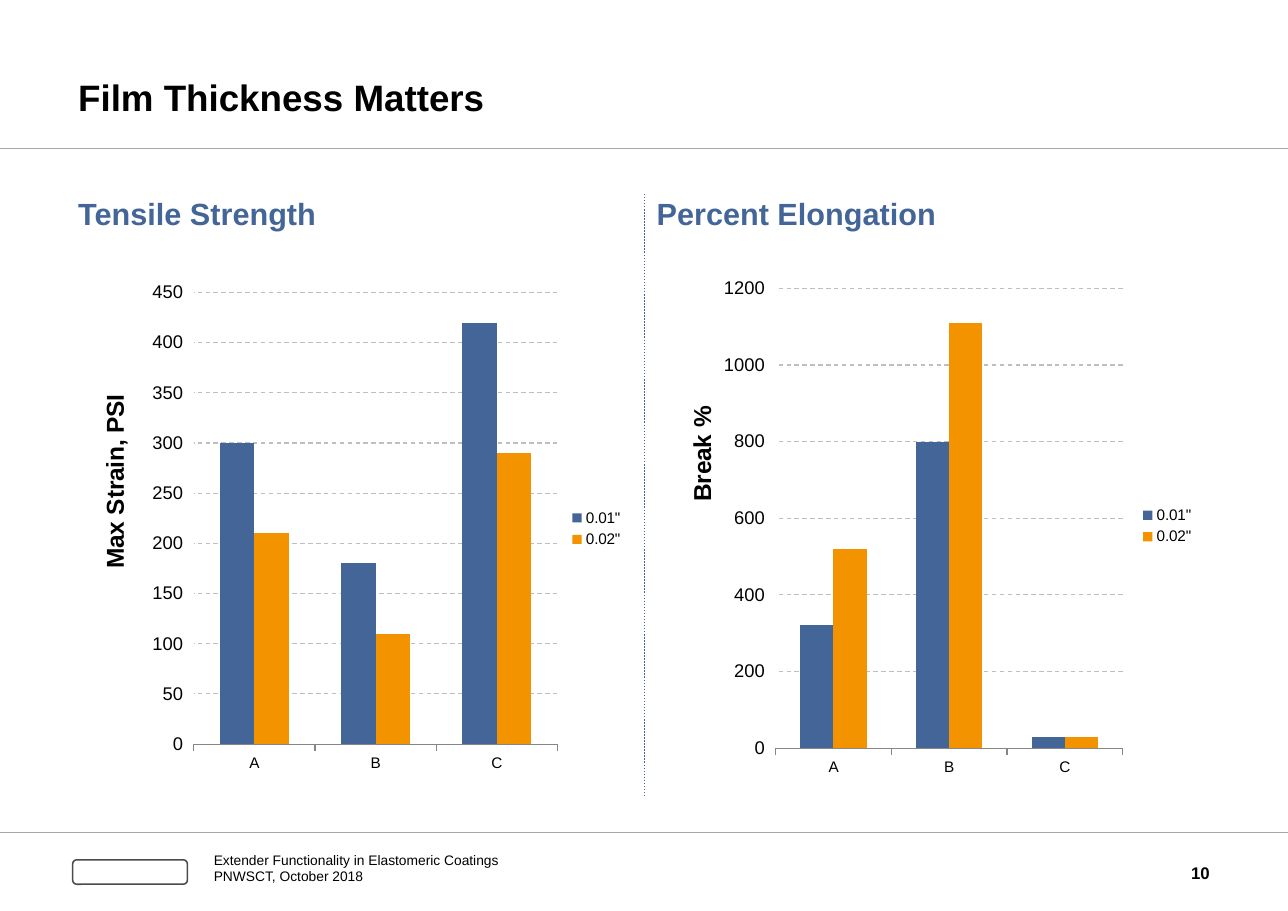
from dataclasses import dataclass
from typing import Optional

from lxml.etree import SubElement
from pptx import Presentation
from pptx.chart.data import CategoryChartData
from pptx.dml.color import RGBColor
from pptx.enum.chart import XL_CHART_TYPE, XL_LEGEND_POSITION, XL_TICK_MARK
from pptx.enum.dml import MSO_LINE
from pptx.enum.shapes import MSO_CONNECTOR, MSO_SHAPE
from pptx.enum.text import MSO_ANCHOR, PP_ALIGN
from pptx.oxml import parse_xml
from pptx.oxml.ns import nsdecls, qn
from pptx.util import Pt

FONT = "Arial"
BLACK, BLUE, ORANGE, GREY = "000000", "436597", "F49300", "A6A6A6"
WIDTH, HEIGHT = 841.68, 595.44
CATEGORIES = ("A", "B", "C")


@dataclass
class Rule:
    x1: float
    y1: float
    x2: float
    y2: float
    color: str
    weight: float
    dash: Optional[MSO_LINE] = None


@dataclass
class Label:
    x: float
    y: float
    w: float
    h: float
    lines: tuple[str, ...]
    size: float
    color: str = BLACK
    bold: bool = True
    anchor: MSO_ANCHOR = MSO_ANCHOR.TOP
    align: PP_ALIGN = PP_ALIGN.LEFT
    leading: Optional[float] = None


@dataclass
class BarChart:
    x: float
    y: float
    w: float
    h: float
    axis_title: str
    top: int
    step: int
    thin: tuple[int, ...]
    thick: tuple[int, ...]
    plot_at: dict[str, float]
    title_at: dict[str, float]


RULES = [
    Rule(0, 97.2, WIDTH, 97.2, GREY, 0.75),
    Rule(0, 544.3, WIDTH, 544.3, GREY, 0.5),
    Rule(421.2, 126.7, 421.2, 521.3, BLUE, 1, MSO_LINE.ROUND_DOT),
]
LABELS = [
    Label(51.1, 15.1, 739.4, 62.6, ("Film Thickness Matters",), 24,
          anchor=MSO_ANCHOR.BOTTOM),
    Label(51.1, 127.4, 365.8, 38.9, ("Tensile Strength",), 20, BLUE),
    Label(429.1, 127.4, 365.8, 38.9, ("Percent Elongation",), 20, BLUE),
    Label(139.7, 556.6, 353.5, 22.3,
          ("Extender Functionality in Elastomeric Coatings", "PNWSCT, October 2018"),
          9, bold=False, anchor=MSO_ANCHOR.MIDDLE, leading=10.4),
    Label(726.5, 553.7, 64.1, 33.8, ("10",), 11,
          anchor=MSO_ANCHOR.MIDDLE, align=PP_ALIGN.RIGHT),
]
CHARTS = [
    BarChart(54.7, 177.8, 360, 335.5, "Max Strain, PSI", 450, 50,
             (300, 180, 420), (210, 110, 290),
             {"x": 0.2, "y": 0.04, "w": 0.66, "h": 0.88}, {"x": 0.02, "y": 0.23}),
    BarChart(427.7, 175, 360, 337.7, "Break %", 1200, 200,
             (320, 800, 30), (520, 1110, 30),
             {"x": 0.22, "y": 0.04, "w": 0.63, "h": 0.89}, {"x": 0.05, "y": 0.26}),
]


def rgb(color: str) -> RGBColor:
    return RGBColor.from_string(color)


def style_font(font, size: float, color: str = BLACK, bold: bool = False) -> None:
    font.name = FONT
    font.size = Pt(size)
    font.bold = bold
    font.color.rgb = rgb(color)


def style_line(line, color: str, weight: float, dash: Optional[MSO_LINE] = None) -> None:
    line.color.rgb = rgb(color)
    line.width = Pt(weight)
    if dash is not None:
        line.dash_style = dash


def draw_rule(s, rule: Rule) -> None:
    cxn = s.shapes.add_connector(MSO_CONNECTOR.STRAIGHT, Pt(rule.x1), Pt(rule.y1),
                                 Pt(rule.x2), Pt(rule.y2))
    style_line(cxn.line, rule.color, rule.weight, rule.dash)
    SubElement(cxn._element.spPr, qn("a:effectLst"))


def draw_label(s, label: Label) -> None:
    sp = s.shapes.add_textbox(Pt(label.x), Pt(label.y), Pt(label.w), Pt(label.h))
    tf = sp.text_frame
    tf.word_wrap = True
    tf.vertical_anchor = label.anchor
    tf.margin_left = tf.margin_right = tf.margin_top = tf.margin_bottom = Pt(0)
    for i, line in enumerate(label.lines):
        p = tf.add_paragraph() if i else tf.paragraphs[0]
        p.alignment = label.align
        if label.leading:
            p.line_spacing = Pt(label.leading)
        r = p.add_run()
        r.text = line
        style_font(r.font, label.size, label.color, label.bold)


def draw_badge(s) -> None:
    sp = s.shapes.add_shape(MSO_SHAPE.ROUNDED_RECTANGLE, Pt(47.5), Pt(562), Pt(75), Pt(16))
    sp.shadow.inherit = False
    sp.fill.solid()
    sp.fill.fore_color.rgb = rgb("FFFFFF")
    style_line(sp.line, "4B4B4D", 1)


def set_layout(parent, index: int, place: dict[str, float]) -> None:
    for old in parent.findall(qn("c:layout")):
        parent.remove(old)
    layout = parse_xml(f"<c:layout {nsdecls('c')}/>")
    manual = SubElement(layout, qn("c:manualLayout"))
    settings = {"xMode": "edge", "yMode": "edge", **place}
    if "w" in place:
        settings = {"layoutTarget": "inner", **settings}
    for name, value in settings.items():
        SubElement(manual, qn(f"c:{name}")).set("val", str(value))
    parent.insert(index, layout)


def draw_chart(s, spec: BarChart) -> None:
    data = CategoryChartData()
    data.categories = CATEGORIES
    data.add_series('0.01"', spec.thin)
    data.add_series('0.02"', spec.thick)
    chart = s.shapes.add_chart(XL_CHART_TYPE.COLUMN_CLUSTERED, Pt(spec.x), Pt(spec.y),
                               Pt(spec.w), Pt(spec.h), data).chart
    style_font(chart.font, 10)
    chart.has_title = False
    chart.has_legend = True
    chart.legend.position = XL_LEGEND_POSITION.RIGHT
    chart.legend.include_in_layout = False

    plot = chart.plots[0]
    plot.vary_by_categories = False
    plot.gap_width = 150
    plot.overlap = 0
    for series, color in zip(plot.series, (BLUE, ORANGE)):
        series.format.fill.solid()
        series.format.fill.fore_color.rgb = rgb(color)

    cat = chart.category_axis
    cat.major_tick_mark = XL_TICK_MARK.OUTSIDE
    style_line(cat.format.line, "868686", 0.75)

    val = chart.value_axis
    val.minimum_scale, val.maximum_scale, val.major_unit = 0, spec.top, spec.step
    val.major_tick_mark = XL_TICK_MARK.OUTSIDE
    val.format.line.fill.background()
    val.tick_labels.number_format = "0"
    val.tick_labels.number_format_is_linked = False
    style_font(val.tick_labels.font, 12)
    style_line(val.major_gridlines.format.line, "BFBFBF", 0.75, MSO_LINE.DASH)
    r = val.axis_title.text_frame.paragraphs[0].add_run()
    r.text = spec.axis_title
    style_font(r.font, 16, bold=True)

    set_layout(val.axis_title._element, 1, spec.title_at)
    set_layout(chart._chartSpace.chart.plotArea, 0, spec.plot_at)


def main() -> None:
    prs = Presentation()
    prs.slide_width, prs.slide_height = Pt(WIDTH), Pt(HEIGHT)
    s = prs.slides.add_slide(prs.slide_layouts[6])
    for rule in RULES:
        draw_rule(s, rule)
    draw_badge(s)
    for label in LABELS:
        draw_label(s, label)
    for spec in CHARTS:
        draw_chart(s, spec)
    prs.save("out.pptx")


if __name__ == "__main__":
    main()
